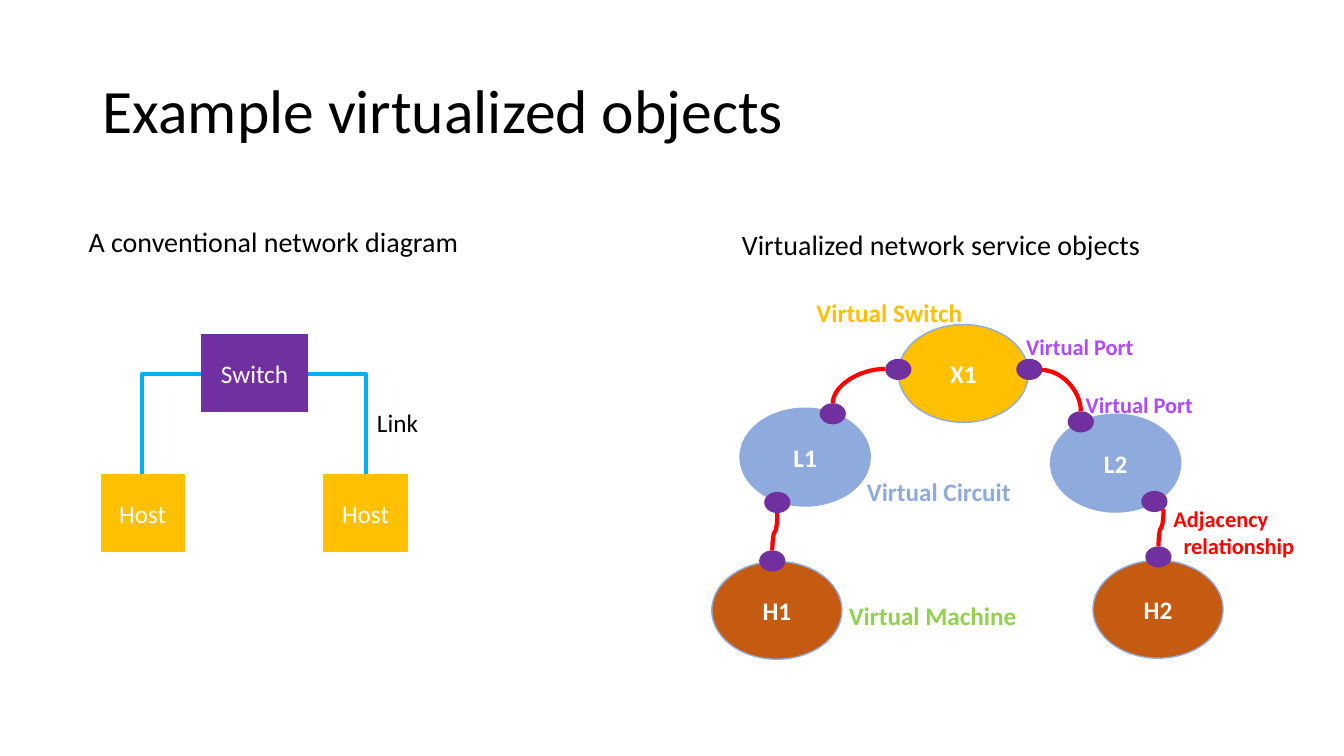
from pptx import Presentation
from pptx.dml.color import RGBColor
from pptx.enum.shapes import MSO_CONNECTOR as CONN, MSO_SHAPE as SHAPE
from pptx.enum.text import MSO_ANCHOR as ANCHOR, MSO_AUTO_SIZE as AUTO, PP_ALIGN as ALIGN
from pptx.oxml.ns import qn
from pptx.util import Inches, Pt
from lxml import etree

BLACK = RGBColor(0x00, 0x00, 0x00)
WHITE = RGBColor(0xFF, 0xFF, 0xFF)
GOLD = RGBColor(0xFF, 0xC0, 0x00)
PURPLE = RGBColor(0x70, 0x30, 0xA0)
VIOLET = RGBColor(0xAF, 0x4A, 0xFF)
SKY = RGBColor(0x00, 0xB0, 0xF0)
BLUE = RGBColor(0x8F, 0xAA, 0xDC)
RUST = RGBColor(0xC5, 0x5A, 0x11)
RED = RGBColor(0xFF, 0x00, 0x00)
GREEN = RGBColor(0x92, 0xD0, 0x50)
FONT = "Calibri"

# Content: positions and sizes in inches
TITLE = "Example virtualized objects"
DEVICES = [  # text, left, top, width, fill
    ("Host", 0.99, 4.7, 0.85, GOLD),
    ("Host", 3.2, 4.7, 0.85, GOLD),
    ("Switch", 1.99, 3.31, 1.07, PURPLE),
]
DEVICE_H = 0.78
NODES = [  # text, left, top, fill, left and top of each port
    ("H1", 7.06, 5.57, RUST, [(7.53, 5.46)]),
    ("H2", 10.84, 5.56, RUST, [(11.36, 5.42)]),
    ("X1", 8.91, 3.22, GOLD, [(8.78, 3.56), (10.08, 3.56)]),
    ("L1", 7.34, 4.05, BLUE, [(7.58, 4.88), (8.13, 4.0)]),
    ("L2", 10.42, 4.11, BLUE, [(11.32, 4.87), (10.59, 4.08)]),
]
NODE_W, NODE_H = 1.29, 0.97
PORT_W, PORT_H = 0.26, 0.21
LINKS = [(1.99, 3.71, 1.41, 4.7), (3.06, 3.71, 3.63, 4.7)]
ARCS = [(8.78, 3.66, 8.26, 4.0), (10.33, 3.67, 10.72, 4.08)]
S_CURVES = [(11.54, 5.05, 11.49, 5.42), (7.71, 5.09, 7.66, 5.46)]
LABELS = [  # lines, left, top, width, height, size, colour, bold
    (["A conventional network diagram"], 0.78, 2.18, 4.7, 0.44, 20, BLACK, False),
    (["Virtualized network service objects"], 7.26, 2.21, 4.88, 0.44, 20, BLACK, False),
    (["Link"], 3.64, 3.99, 0.65, 0.4, 18, BLACK, False),
    (["Virtual Machine"], 8.32, 5.91, 1.88, 0.4, 18, GREEN, True),
    (["Virtual Circuit"], 8.5, 4.68, 1.64, 0.4, 18, BLUE, True),
    (["Virtual Switch"], 8.0, 2.9, 1.66, 0.4, 18, GOLD, True),
    (["Virtual Port"], 10.08, 3.26, 1.28, 0.37, 16, VIOLET, True),
    (["Virtual Port"], 10.67, 3.83, 1.28, 0.37, 16, VIOLET, True),
    (["Adjacency", "relationship"], 11.54, 4.96, 1.42, 0.64, 16, RED, True),
]
SECOND_LINE_INDENT = 0.1


def add_run(p, text, size, color, bold=False):
    r = p.add_run()
    r.text = text
    r.font.name, r.font.size, r.font.bold = FONT, Pt(size), bold
    r.font.color.rgb = color


def add_box(shapes, kind, left, top, width, height, fill, line=None, text="", bold=False):
    sp = shapes.add_shape(kind, Inches(left), Inches(top), Inches(width), Inches(height))
    sp.shadow.inherit = False
    sp.fill.solid()
    sp.fill.fore_color.rgb = fill
    if line is None:
        sp.line.fill.background()
    else:
        sp.line.color.rgb = line
        sp.line.width = Pt(1)
    if text:
        tf = sp.text_frame
        tf.vertical_anchor = ANCHOR.MIDDLE
        tf.paragraphs[0].alignment = ALIGN.CENTER
        add_run(tf.paragraphs[0], text, 18, WHITE, bold)


def add_line(shapes, kind, preset, ends, color):
    c = shapes.add_connector(kind, *[Inches(v) for v in ends])
    c.line.color.rgb = color
    c.line.width = Pt(3)
    sppr = c._element.spPr
    sppr.find(qn("a:prstGeom")).set("prst", preset)
    etree.SubElement(sppr, qn("a:effectLst"))
    return sppr.find(qn("a:xfrm"))


def add_s_curve(shapes, x1, y1, x2, y2):
    # A quarter turn about the centre makes the curve leave downwards
    cx, cy = (x1 + x2) / 2, (y1 + y2) / 2
    half_w, half_h = (y2 - y1) / 2, (x1 - x2) / 2
    ends = (cx - half_w, cy - half_h, cx + half_w, cy + half_h)
    xfrm = add_line(shapes, CONN.CURVE, "curvedConnector3", ends, RED)
    xfrm.set("rot", str(90 * 60000))


prs = Presentation()
prs.slide_width, prs.slide_height = Inches(13.33), Inches(7.5)
s = prs.slides.add_slide(prs.slide_layouts[6])

# Title
tf = s.shapes.add_textbox(Inches(0.92), Inches(0.4), Inches(11.5), Inches(1.45)).text_frame
tf.word_wrap = True
tf.vertical_anchor = ANCHOR.MIDDLE
tf.paragraphs[0].line_spacing = 0.9
add_run(tf.paragraphs[0], TITLE, 44, BLACK)

# Conventional network
for text, left, top, width, fill in DEVICES:
    add_box(s.shapes, SHAPE.RECTANGLE, left, top, width, DEVICE_H, fill, WHITE, text)
for ends in LINKS:
    add_line(s.shapes, CONN.ELBOW, "bentConnector2", ends, SKY)

# Virtual nodes, each grouped with its ports
for text, left, top, fill, ports in NODES:
    group = s.shapes.add_group_shape()
    add_box(group.shapes, SHAPE.OVAL, left, top, NODE_W, NODE_H, fill, BLUE, text, True)
    for x, y in ports:
        add_box(group.shapes, SHAPE.OVAL, x, y, PORT_W, PORT_H, PURPLE)

# Adjacencies between ports
for ends in S_CURVES:
    add_s_curve(s.shapes, *ends)
for ends in ARCS:
    add_line(s.shapes, CONN.CURVE, "curvedConnector2", ends, RED)

# Labels
for lines, left, top, width, height, size, color, bold in LABELS:
    tb = s.shapes.add_textbox(Inches(left), Inches(top), Inches(width), Inches(height))
    tf = tb.text_frame
    tf.word_wrap = False
    tf.auto_size = AUTO.SHAPE_TO_FIT_TEXT
    for i, text in enumerate(lines):
        p = tf.add_paragraph() if i else tf.paragraphs[0]
        if i:
            p._p.get_or_add_pPr().set("marL", str(Inches(SECOND_LINE_INDENT)))
        add_run(p, text, size, color, bold)

prs.save("out.pptx")
